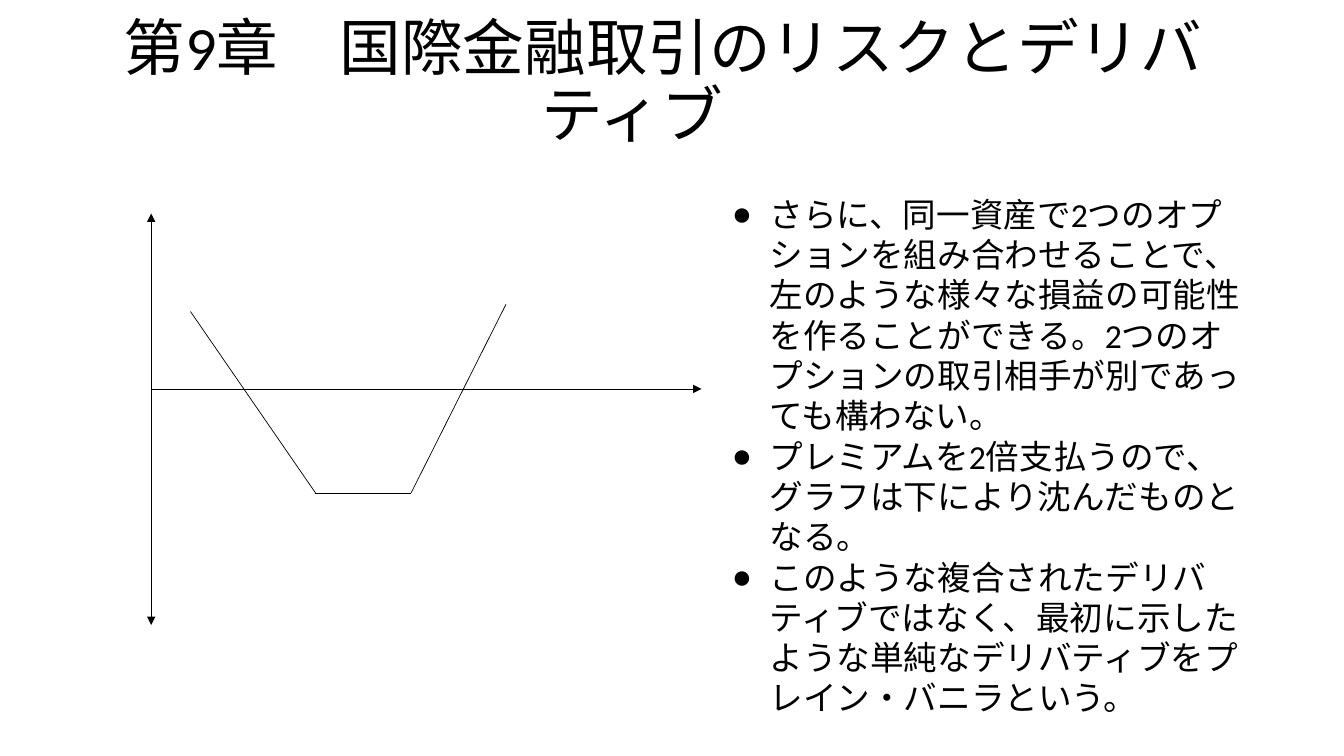
import pptx
import pptx.dml.color
import pptx.enum.shapes
import pptx.enum.text
import pptx.oxml.ns
import pptx.util
from lxml import etree
from pptx.util import Cm

BLACK = "000000"
TITLE = "第9章　国際金融取引のリスクとデリバティブ　"
POINTS = [
    "さらに、同一資産で2つのオプションを組み合わせることで、左のような様々な損益の可能性を作ることができる。2つのオプションの取引相手が別であっても構わない。",
    "プレミアムを2倍支払うので、グラフは下により沈んだものとなる。",
    "このような複合されたデリバティブではなく、最初に示したような単純なデリバティブをプレイン・バニラという。",
]
ORIGIN_X, ZERO_Y = 3.81, 9.8
PAYOFF = [(4.8, 7.85), (7.95, 12.42), (10.36, 12.42), (12.75, 7.67)]


def color(value):
    """Turn a hex string into a colour."""
    return pptx.dml.color.RGBColor.from_string(value)


def add_element(parent, tag, **attributes):
    """Append a drawing element with its attributes."""
    return etree.SubElement(parent, pptx.oxml.ns.qn(tag), **attributes)


def place(shape, left, top, width, height, anchor):
    """Set the box of a placeholder and how its text sits in it."""
    shape.left, shape.top = Cm(left), Cm(top)
    shape.width, shape.height = Cm(width), Cm(height)
    shape.text_frame.word_wrap = True
    shape.text_frame.auto_size = pptx.enum.text.MSO_AUTO_SIZE.NONE
    shape.text_frame.vertical_anchor = anchor


def write(paragraph, text, size, alignment, spacing=1.0, bullet=None):
    """Fill a paragraph with formatted text and an optional bullet."""
    paragraph.alignment = alignment
    paragraph.line_spacing = spacing
    paragraph.space_before = pptx.util.Pt(0)
    run = paragraph.add_run()
    run.text = text
    run.font.size = pptx.util.Pt(size)
    run.font.name = "Calibri"
    run.font.color.rgb = color(BLACK)
    if bullet:
        properties = paragraph._p.get_or_add_pPr()
        properties.set("marL", str(Cm(0.95)))
        properties.set("indent", str(-Cm(0.95)))
        add_element(properties, "a:buChar", char=bullet)


def add_line(slide, start, end, head=False, tail=False):
    """Draw a thin line with optional arrowheads at its ends."""
    connector = slide.shapes.add_connector(
        pptx.enum.shapes.MSO_CONNECTOR.STRAIGHT,
        *(Cm(value) for value in (*start, *end)))
    connector.line.width = pptx.util.Pt(0.5)
    connector.line.color.rgb = color(BLACK)
    line = connector.line._get_or_add_ln()
    if head:
        add_element(line, "a:headEnd", type="triangle")
    if tail:
        add_element(line, "a:tailEnd", type="triangle")
    add_element(connector._element.spPr, "a:effectLst")


def main():
    """Build and save the slide."""
    presentation = pptx.Presentation()
    presentation.slide_width, presentation.slide_height = Cm(33.87), Cm(19.05)
    slide = presentation.slides.add_slide(presentation.slide_layouts[1])
    title, body = slide.placeholders
    align, anchor = pptx.enum.text.PP_ALIGN, pptx.enum.text.MSO_ANCHOR

    place(title, 1.96, 0.89, 29.51, 2.46, anchor.MIDDLE)
    write(title.text_frame.paragraphs[0], TITLE, 44, align.CENTER, spacing=0.9)

    add_line(slide, (ORIGIN_X, ZERO_Y), (17.68, ZERO_Y), tail=True)
    add_line(slide, (ORIGIN_X, 15.75), (ORIGIN_X, 5.38), head=True, tail=True)
    for start, end in zip(PAYOFF, PAYOFF[1:]):
        add_line(slide, start, end)

    place(body, 18.19, 4.75, 13.51, 11.46, anchor.TOP)
    frame = body.text_frame
    for index, point in enumerate(POINTS):
        paragraph = frame.add_paragraph() if index else frame.paragraphs[0]
        write(paragraph, point, 24, align.LEFT, bullet="●")

    presentation.save("out.pptx")


if __name__ == "__main__":
    main()
